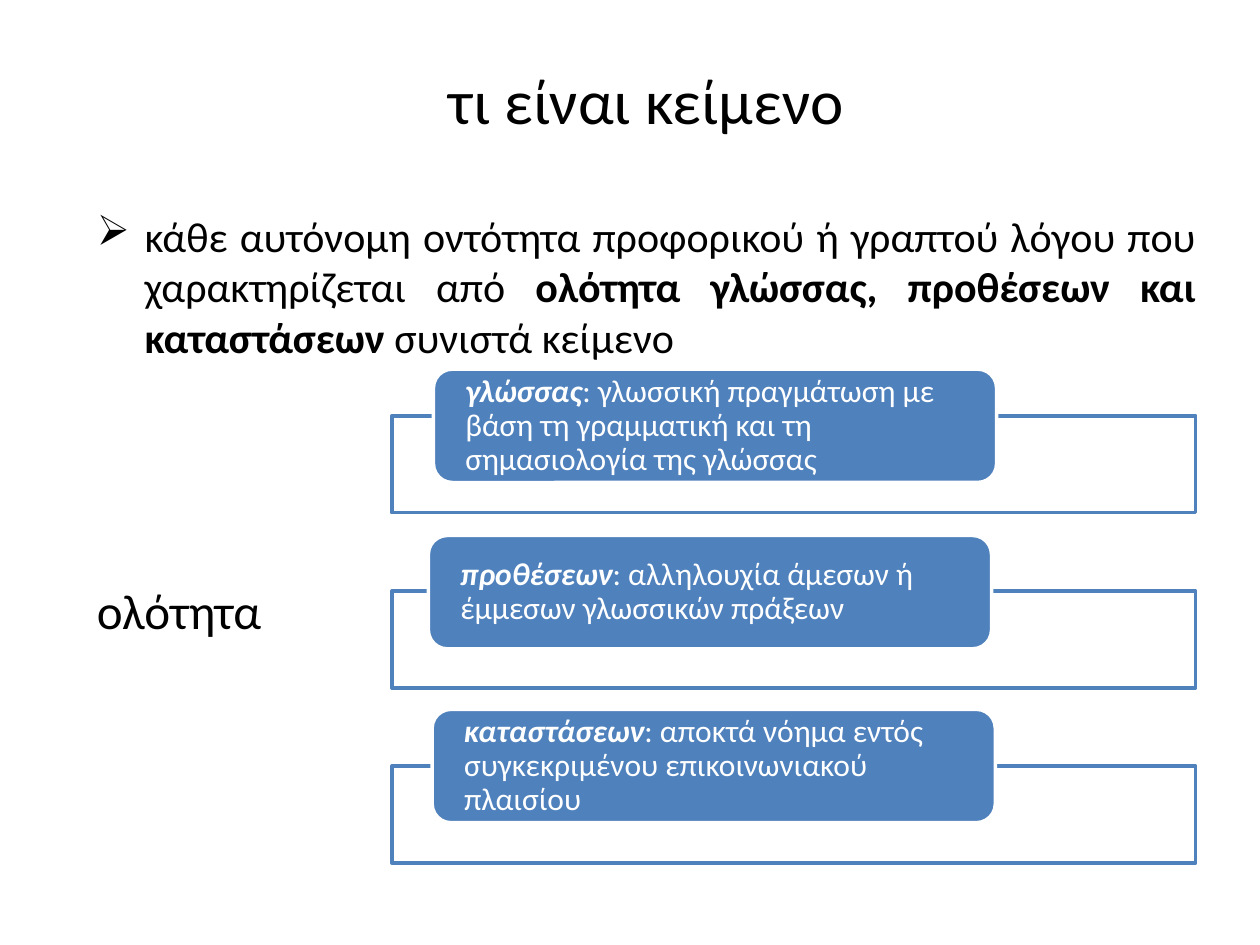
from dataclasses import dataclass

import pptx
import pptx.dml.color
import pptx.enum.shapes
import pptx.enum.text
import pptx.oxml
import pptx.oxml.ns
import pptx.util

Inches = pptx.util.Inches
Align = pptx.enum.text.PP_ALIGN
Anchor = pptx.enum.text.MSO_ANCHOR
Preset = pptx.enum.shapes.MSO_SHAPE

COLORS = {"text": "000000", "blue": "4F81BD", "white": "FFFFFF"}
FONT = "Calibri"
FRAME_TOP, FRAME_PITCH = 3.3, 1.39


@dataclass
class Run:
    text: str
    bold: bool = False
    italic: bool = False


@dataclass
class Aspect:
    term: str
    meaning: str
    left: float
    top: float


ASPECTS = [
    Aspect("γλώσσας", ": γλωσσική πραγμάτωση με βάση τη γραμματική και τη "
           "σημασιολογία της γλώσσας", 3.44, 2.93),
    Aspect("προθέσεων", ": αλληλουχία άμεσων ή έμμεσων γλωσσικών πράξεων",
           3.4, 4.25),
    Aspect("καταστάσεων", ": αποκτά νόημα εντός συγκεκριμένου επικοινωνιακού "
           "πλαισίου", 3.43, 5.63),
]


def rgb(name: str) -> pptx.dml.color.RGBColor:
    return pptx.dml.color.RGBColor.from_string(COLORS[name])


def write(shape, runs: list[Run], *, size: float, color: str = "text",
          align=Align.LEFT, anchor=Anchor.TOP, side: float = 0.1,
          edge: float = 0.05, spacing: float = 1.0, bullet: str = "") -> None:
    """Fill a shape with one formatted paragraph; insets are in inches."""
    frame = shape.text_frame
    frame.word_wrap = True
    frame.vertical_anchor = anchor
    frame.margin_left = frame.margin_right = Inches(side)
    frame.margin_top = frame.margin_bottom = Inches(edge)
    paragraph = frame.paragraphs[0]
    paragraph.alignment = align
    paragraph.line_spacing = spacing
    if bullet:
        properties = paragraph._p.get_or_add_pPr()
        properties.set("marL", str(Inches(0.38)))
        properties.set("indent", str(Inches(-0.38)))
        properties.append(pptx.oxml.parse_xml(
            f'<a:buChar {pptx.oxml.ns.nsdecls("a")} char="{bullet}"/>'))
    for part in runs:
        run = paragraph.add_run()
        run.text = part.text
        run.font.name = FONT
        run.font.size = pptx.util.Pt(size)
        run.font.bold = part.bold
        run.font.italic = part.italic
        run.font.color.rgb = rgb(color)


def add_text(slide, left: float, top: float, width: float, height: float,
             runs: list[Run], **text_format) -> None:
    box = slide.shapes.add_textbox(
        Inches(left), Inches(top), Inches(width), Inches(height))
    write(box, runs, **text_format)


def add_panel(slide, preset, left: float, top: float, width: float,
              height: float, fill: str, line: str):
    panel = slide.shapes.add_shape(
        preset, Inches(left), Inches(top), Inches(width), Inches(height))
    panel.shadow.inherit = False
    panel.fill.solid()
    panel.fill.fore_color.rgb = rgb(fill)
    panel.line.color.rgb = rgb(line)
    panel.line.width = pptx.util.Pt(2)
    return panel


def set_opacity(panel, percent: int) -> None:
    color = panel.fill._xPr.find(".//" + pptx.oxml.ns.qn("a:srgbClr"))
    color.append(pptx.oxml.parse_xml(
        f'<a:alpha {pptx.oxml.ns.nsdecls("a")} val="{percent * 1000}"/>'))


def add_aspect(slide, aspect: Aspect, frame_top: float) -> None:
    """Draw an outlined frame with a rounded label over its upper edge."""
    frame = add_panel(slide, Preset.RECTANGLE, 3.11, frame_top, 6.38, 0.77,
                      "white", "blue")
    set_opacity(frame, 90)
    label = add_panel(slide, Preset.ROUNDED_RECTANGLE, aspect.left, aspect.top,
                      4.47, 0.9, "blue", "white")
    write(label, [Run(aspect.term, bold=True, italic=True), Run(aspect.meaning)],
          size=18, color="white", anchor=Anchor.MIDDLE, side=0.21, edge=0.04,
          spacing=0.9)


def main() -> None:
    deck = pptx.Presentation()
    deck.slide_width, deck.slide_height = Inches(10), Inches(7.5)
    slide = deck.slides.add_slide(deck.slide_layouts[6])

    add_text(slide, 0.67, 1.62, 8.92, 1.3, [
        Run("κάθε αυτόνομη οντότητα προφορικού ή γραπτού λόγου που "
            "χαρακτηρίζεται από "),
        Run("ολότητα γλώσσας, προθέσεων και καταστάσεων", bold=True),
        Run(" συνιστά κείμενο"),
    ], size=24, align=Align.JUSTIFY, bullet="➢")
    add_text(slide, 0.67, 4.56, 2.3, 0.57, [Run("ολότητα")], size=28)
    add_text(slide, 0.67, 0.25, 8.92, 1.08, [Run("τι είναι κείμενο")],
             size=36, align=Align.CENTER, anchor=Anchor.MIDDLE)

    for row, aspect in enumerate(ASPECTS):
        add_aspect(slide, aspect, FRAME_TOP + row * FRAME_PITCH)

    deck.save("out.pptx")


if __name__ == "__main__":
    main()
